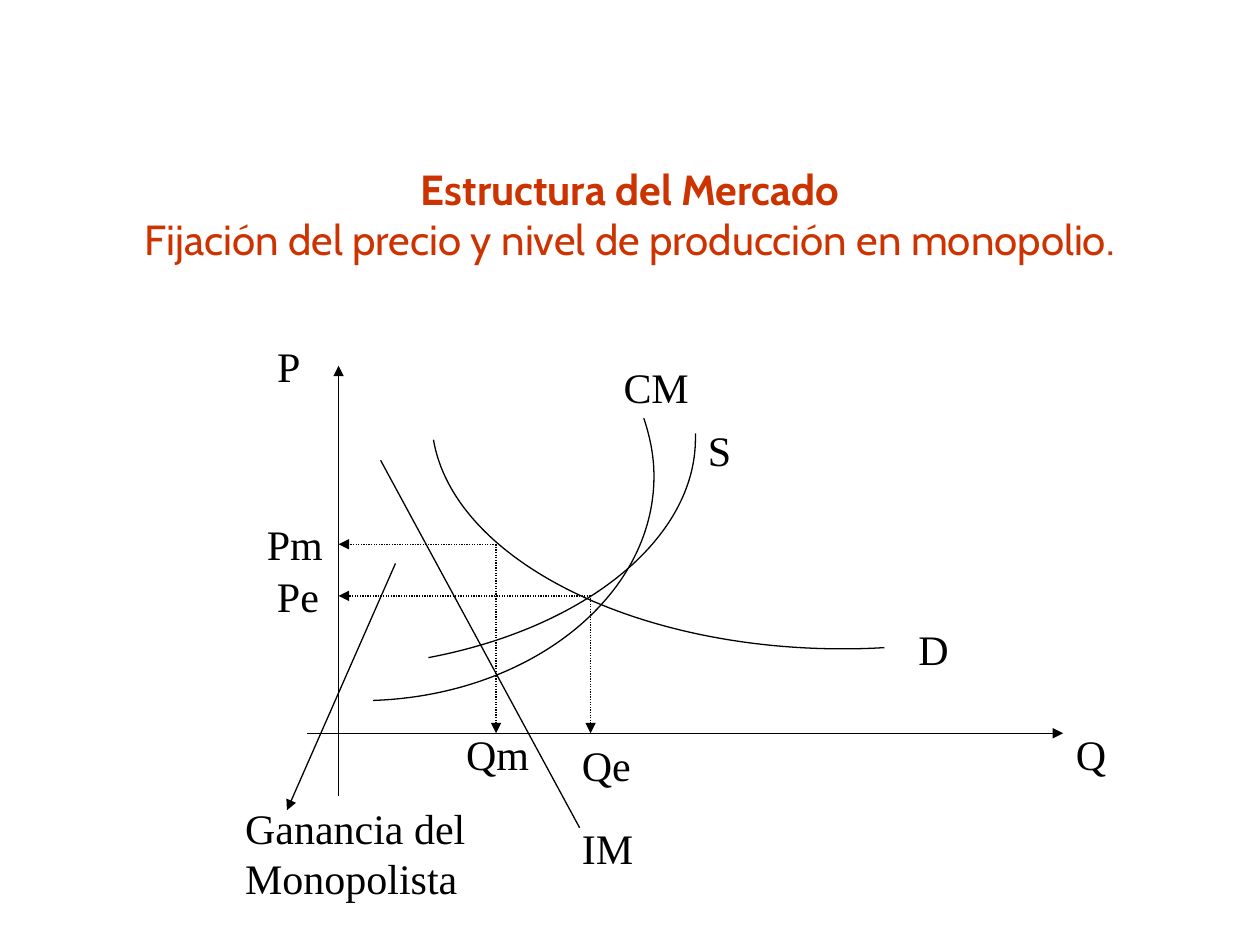
from lxml import etree
from pptx import Presentation
from pptx.dml.color import RGBColor
from pptx.enum.dml import MSO_LINE
from pptx.enum.shapes import MSO_CONNECTOR
from pptx.enum.text import MSO_ANCHOR, PP_ALIGN
from pptx.oxml.ns import qn
from pptx.util import Pt

STRAIGHT = MSO_CONNECTOR.STRAIGHT
DOTTED = MSO_LINE.ROUND_DOT
CENTER = PP_ALIGN.CENTER
MIDDLE = MSO_ANCHOR.MIDDLE
RED = RGBColor(0xCC, 0x33, 0x00)
BLACK = RGBColor(0, 0, 0)
TITLE_FONT = "Cabin"
LABEL_FONT = "Times New Roman"
TEXT_SIZE = Pt(24)

PRICE_AXIS_X, QUANTITY_AXIS_Y = 60.5, 228
EQUILIBRIUM = (204.5, 149.5)
MONOPOLY = (150.5, 120)

SUPPLY = [(111.8, 184.8), (202.5, 167.6), (264.4, 116.4), (264.4, 59.6),
          (264.4, 58.6), (264.4, 57.6), (264.4, 56.7)]
DEMAND = [(372.4, 179.1), (364.5, 179.6), (356.6, 179.8), (348.7, 179.8),
          (227.7, 179.8), (126.2, 128), (114.7, 60.3)]
MARGINAL_COST = [(80.1, 209.3), (169.4, 206.4), (240.7, 150.3), (240.7, 81.2),
                 (240.7, 69.6), (238.5, 58.8), (234.9, 48)]

LABELS = [
    ("Q", 474.7, 221.6, 36, 36),
    ("Qe", 192.4, 228, 54, 36),
    ("Qm", 126.2, 221.6, 54, 36),
    ("P", 18.2, 0, 24, 36),
    ("Pe", 18.2, 131.6, 42, 36),
    ("Pm", 12.4, 102, 54, 36),
    ("S", 264.4, 48, 30, 36),
    ("D", 384.7, 161.8, 36, 36),
    ("CM", 216.2, 12, 60, 36),
    ("IM", 192.4, 275.6, 48, 36),
    ("Ganancia del Monopolista", 0, 264, 144, 65),
]


def style_line(line):
    """Give a line the thin black stroke of the diagram."""
    line.color.rgb = BLACK
    line.width = Pt(0.75)


def add_line(shapes, box, start, end, arrow=True, dotted=False):
    """Draw a straight line between two points of the box."""
    left, top = box
    connector = shapes.add_connector(
        STRAIGHT, Pt(left + start[0]), Pt(top + start[1]),
        Pt(left + end[0]), Pt(top + end[1]))
    style_line(connector.line)
    if dotted:
        connector.line.dash_style = DOTTED
    if arrow:
        stroke = connector.line._get_or_add_ln()
        etree.SubElement(stroke, qn("a:tailEnd"), type="triangle")
    etree.SubElement(connector._element.spPr, qn("a:effectLst"))


def add_curve(shapes, box, points):
    """Draw an open Bezier curve: a start, then triples of control points."""
    left, top = box
    start, *rest = [(Pt(left + x), Pt(top + y)) for x, y in points]
    builder = shapes.build_freeform(*start)
    builder.add_line_segments(rest, close=False)
    curve = builder.convert_to_shape()
    curve.shadow.inherit = False
    curve.fill.background()
    style_line(curve.line)
    segments = list(curve._element.iter(qn("a:lnTo")))
    for first in range(0, len(segments), 3):
        bezier = etree.Element(qn("a:cubicBezTo"))
        segments[first].addprevious(bezier)
        for segment in segments[first:first + 3]:
            bezier.append(segment[0])
            segment.getparent().remove(segment)


def add_label(shapes, box, text, x, y, width, height):
    """Write a label at a place in the box."""
    left, top = box
    label = shapes.add_textbox(Pt(left + x), Pt(top + y), Pt(width), Pt(height))
    label.text_frame.word_wrap = True
    paragraph = label.text_frame.paragraphs[0]
    paragraph.text = text
    paragraph.font.name = LABEL_FONT
    paragraph.font.size = TEXT_SIZE
    paragraph.font.color.rgb = BLACK


def add_title(slide, left, top, width, height):
    """Fill the title with a bold heading and a plain second line."""
    title = slide.shapes.title
    title.left, title.top = Pt(left), Pt(top)
    title.width, title.height = Pt(width), Pt(height)
    title.text_frame.vertical_anchor = MIDDLE
    paragraph = title.text_frame.paragraphs[0]
    paragraph.alignment = CENTER
    paragraph.font.name = TITLE_FONT
    paragraph.font.size = TEXT_SIZE
    paragraph.font.color.rgb = RED
    heading = paragraph.add_run()
    heading.text = "Estructura del Mercado"
    heading.font.bold = True
    paragraph.add_line_break()
    subject = paragraph.add_run()
    subject.text = "Fijación del precio y nivel de producción en monopolio."
    subject.font.bold = False


def add_monopoly_diagram(slide, left, top):
    """Draw the axes, curves, guides and labels as one group."""
    shapes = slide.shapes.add_group_shape().shapes
    box = (left, top)
    add_line(shapes, box, (PRICE_AXIS_X, 264), (PRICE_AXIS_X, 18))
    add_line(shapes, box, (42.5, QUANTITY_AXIS_Y), (474.5, QUANTITY_AXIS_Y))
    for quantity, price in (EQUILIBRIUM, MONOPOLY):
        for foot in ((quantity, QUANTITY_AXIS_Y), (PRICE_AXIS_X, price)):
            add_line(shapes, box, (quantity, price), foot, dotted=True)
    for curve in (SUPPLY, DEMAND, MARGINAL_COST):
        add_curve(shapes, box, curve)
    add_line(shapes, box, (84.5, 72), (198.2, 282), arrow=False)
    add_line(shapes, box, (93, 131), (31, 272))
    for label in LABELS:
        add_label(shapes, box, *label)


def main():
    """Build the slide and save it."""
    presentation = Presentation()
    presentation.slide_width, presentation.slide_height = Pt(720), Pt(540)
    slide = presentation.slides.add_slide(presentation.slide_layouts[5])
    add_title(slide, 54, 77, 612, 90)
    add_monopoly_diagram(slide, 133, 191)
    presentation.save("out.pptx")


if __name__ == "__main__":
    main()
